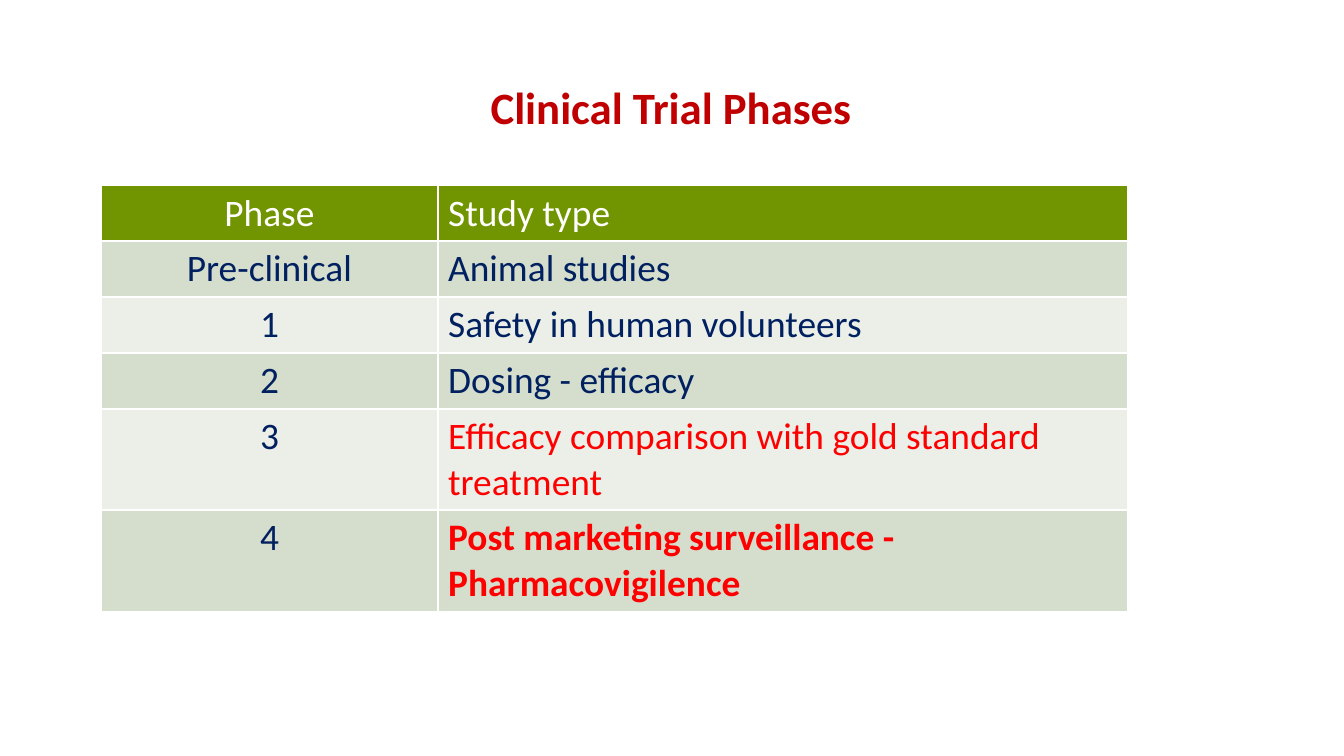
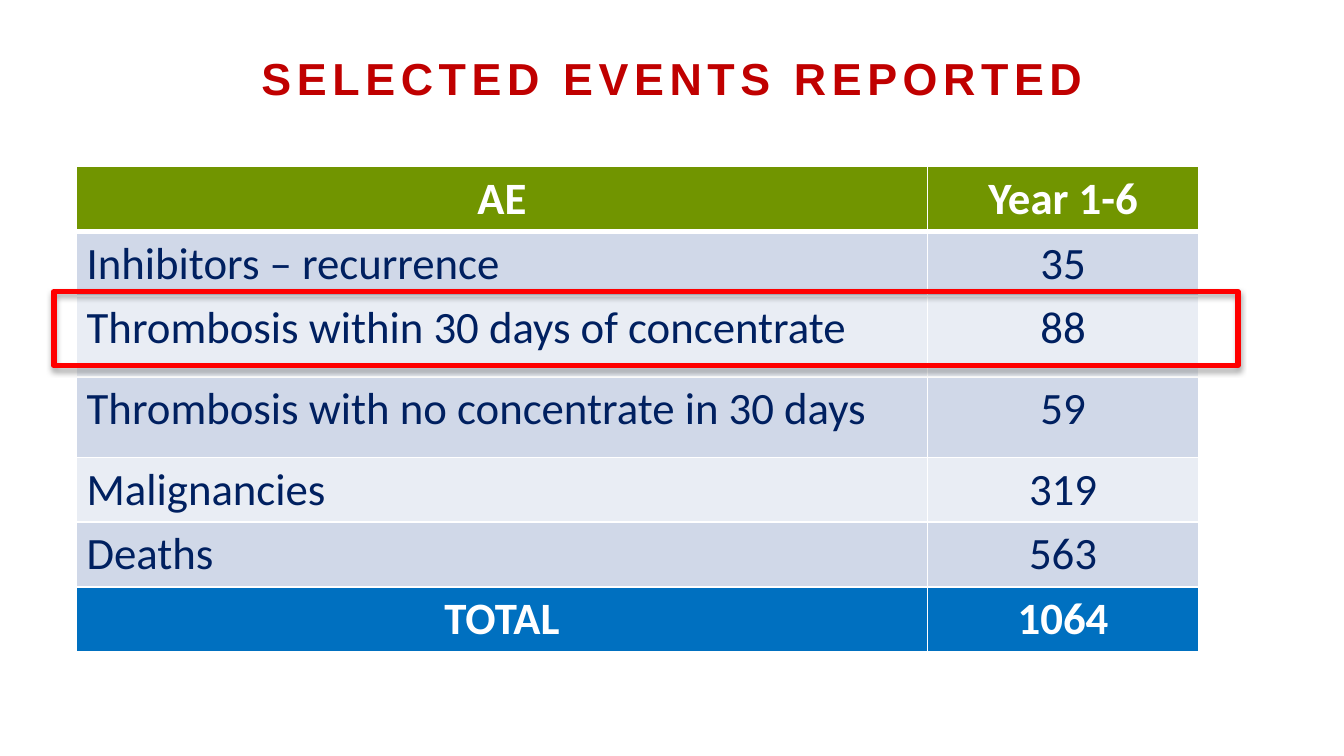
import pptx
import pptx.util
import pptx.dml.color
import pptx.enum.shapes
import pptx.enum.text
import pptx.oxml
import pptx.oxml.ns
from lxml import etree

PX = 2286
WIDTH, HEIGHT = 4000, 2250
MARGIN_X, MARGIN_Y = 30, 15
LEFT = pptx.enum.text.PP_ALIGN.LEFT
CENTER = pptx.enum.text.PP_ALIGN.CENTER
TOP = pptx.enum.text.MSO_ANCHOR.TOP
MIDDLE = pptx.enum.text.MSO_ANCHOR.MIDDLE

THEME = {
    "title": "C00000", "header": "719500", "total": "0070C0",
    "text": "002060", "light": "FFFFFF", "accent": "FF0000", "shadow": "000000",
    "green_bands": ("D5DDCC", "EBEFE7"), "blue_bands": ("D0D8E8", "E9EDF4"),
    "font": "Calibri", "caps_font": "Arial",
    "title_size": 24, "phase_size": 20, "event_size": 24,
    "thin": 1, "thick": 3,
}

PHASES = {
    "title": {"text": "Clinical Trial Phases", "box": (1420, 216, 1164, 200),
              "font": "font", "spacing": 0, "align": LEFT, "anchor": TOP},
    "table": {
        "box": (300, 552, 3056, 1248), "columns": (1004, 2052),
        "rows": (120, 120, 120, 120, 212, 212),
        "size": "phase_size", "bands": "green_bands",
        "aligns": (CENTER, LEFT), "header_aligns": (CENTER, LEFT),
        "header_bold": False, "header_rule": "thin", "has_total": False,
        "accents": {(4, 1): False, (5, 1): True},
        "cells": [
            ("Phase", "Study type"),
            ("Pre-clinical", "Animal studies"),
            ("1", "Safety in human volunteers"),
            ("2", "Dosing - efficacy"),
            ("3", "Efficacy comparison with gold standard treatment"),
            ("4", "Post marketing surveillance - Pharmacovigilence"),
        ],
    },
}

EVENTS = {
    "title": {"text": "SELECTED EVENTS REPORTED", "box": (724, 108, 2552, 248),
              "font": "caps_font", "spacing": 3, "align": CENTER, "anchor": MIDDLE},
    "table": {
        "box": (228, 496, 3340, 1428), "columns": (2532, 808),
        "rows": (140, 144, 240, 240, 144, 144, 144),
        "size": "event_size", "bands": "blue_bands",
        "aligns": (LEFT, CENTER), "header_aligns": (CENTER, CENTER),
        "header_bold": True, "header_rule": "thick", "has_total": True,
        "accents": {},
        "cells": [
            ("AE", "Year 1-6"),
            ("Inhibitors – recurrence", "35"),
            ("Thrombosis within 30 days of concentrate", "88"),
            ("Thrombosis with no concentrate in 30 days", "59"),
            ("Malignancies", "319"),
            ("Deaths", "563"),
            ("TOTAL", "1064"),
        ],
    },
    "highlight": (160, 868, 3524, 220),
}


def px(*values):
    return [pptx.util.Emu(v * PX) for v in values]


def rgb(name):
    return pptx.dml.color.RGBColor.from_string(THEME.get(name, name))


def set_font(font, face, size, color, bold):
    font.name = THEME[face]
    font.size = pptx.util.Pt(THEME[size])
    font.color.rgb = rgb(color)
    font.bold = bold


def add_title(slide, title):
    sp = slide.shapes.title
    sp.left, sp.top, sp.width, sp.height = px(*title["box"])
    tf = sp.text_frame
    tf.text = title["text"]
    tf.word_wrap = True
    tf.auto_size = pptx.enum.text.MSO_AUTO_SIZE.NONE
    tf.vertical_anchor = title["anchor"]
    p = tf.paragraphs[0]
    p.alignment = title["align"]
    set_font(p.font, title["font"], "title_size", "title", True)
    if title["spacing"]:
        p.runs[0].font._element.set("spc", str(title["spacing"] * 100))


def add_borders(cell, top, bottom):
    tc_pr = cell._tc.get_or_add_tcPr()
    sides = {"L": "thin", "R": "thin", "T": top, "B": bottom}
    for side, weight in sides.items():
        ln = etree.SubElement(tc_pr, pptx.oxml.ns.qn(f"a:ln{side}"),
                              w=str(int(pptx.util.Pt(THEME[weight]))))
        fill = etree.SubElement(ln, pptx.oxml.ns.qn("a:solidFill"))
        etree.SubElement(fill, pptx.oxml.ns.qn("a:srgbClr"), val=THEME["light"])


def row_style(data, row):
    if row == 0:
        return "header", "light", data["header_bold"], data["header_aligns"]
    if data["has_total"] and row == len(data["cells"]) - 1:
        return "total", "light", True, data["header_aligns"]
    return THEME[data["bands"]][(row - 1) % 2], "text", False, data["aligns"]


def add_table(slide, data):
    cells = data["cells"]
    frame = slide.shapes.add_table(len(cells), len(data["columns"]), *px(*data["box"]))
    table = frame.table
    table.horz_banding = False
    for column, width in zip(table.columns, px(*data["columns"])):
        column.width = width
    for row, height in zip(table.rows, px(*data["rows"])):
        row.height = height
    frame.height = px(data["box"][3])[0]

    margin_x, margin_y = px(MARGIN_X, MARGIN_Y)
    for r, texts in enumerate(cells):
        fill, color, bold, aligns = row_style(data, r)
        top = data["header_rule"] if r == 1 else "thin"
        bottom = data["header_rule"] if r == 0 else "thin"
        for c, text in enumerate(texts):
            cell = table.cell(r, c)
            add_borders(cell, top, bottom)
            cell.fill.solid()
            cell.fill.fore_color.rgb = rgb(fill)
            cell.margin_left = cell.margin_right = margin_x
            cell.margin_top = cell.margin_bottom = margin_y
            cell.text = text
            p = cell.text_frame.paragraphs[0]
            p.alignment = aligns[c]
            accented = (r, c) in data["accents"]
            set_font(p.font, "font", data["size"], "accent" if accented else color,
                     data["accents"].get((r, c), bold))


def add_highlight(slide, box):
    sp = slide.shapes.add_shape(pptx.enum.shapes.MSO_SHAPE.RECTANGLE, *px(*box))
    sp.fill.background()
    sp.line.color.rgb = rgb("accent")
    sp.line.width = pptx.util.Pt(THEME["thick"])
    sp.shadow.inherit = False
    effects = sp._element.spPr.find(pptx.oxml.ns.qn("a:effectLst"))
    effects.append(pptx.oxml.parse_xml(
        f'<a:outerShdw {pptx.oxml.ns.nsdecls("a")} blurRad="40000" dist="23000" '
        f'dir="5400000" rotWithShape="0"><a:srgbClr val="{THEME["shadow"]}">'
        '<a:alpha val="35000"/></a:srgbClr></a:outerShdw>'))


def main():
    prs = pptx.Presentation()
    prs.slide_width, prs.slide_height = px(WIDTH, HEIGHT)
    for content in (PHASES, EVENTS):
        slide = prs.slides.add_slide(prs.slide_layouts[5])
        add_title(slide, content["title"])
        add_table(slide, content["table"])
        if "highlight" in content:
            add_highlight(slide, content["highlight"])
    prs.save("out.pptx")


if __name__ == "__main__":
    main()
